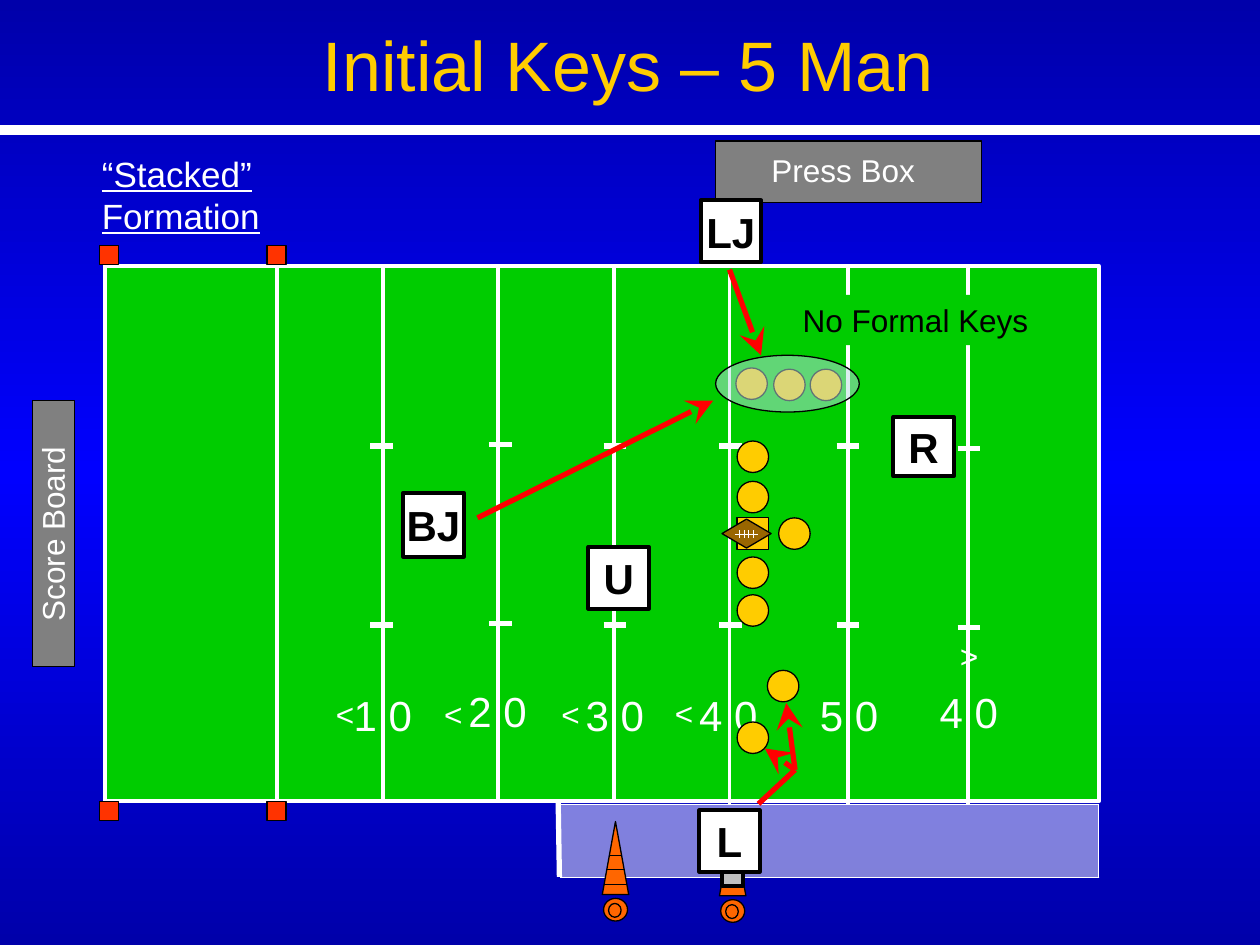
from dataclasses import dataclass
from copy import deepcopy

from lxml.etree import SubElement
from pptx import Presentation
from pptx.dml.color import RGBColor
from pptx.enum.dml import MSO_LINE_DASH_STYLE as DASH
from pptx.enum.shapes import MSO_CONNECTOR, MSO_SHAPE as SHAPE
from pptx.enum.text import MSO_ANCHOR as ANCHOR, MSO_AUTO_SIZE as FIT, PP_ALIGN as ALIGN
from pptx.oxml.ns import qn
from pptx.util import Cm, Pt


@dataclass(frozen=True)
class Theme:
    """Colours and type sizes of the slide."""
    font: str = "Arial"
    white: str = "FFFFFF"
    black: str = "000000"
    gold: str = "FFCC00"
    grass: str = "00CC00"
    grey: str = "808080"
    pylon: str = "FF3300"
    cone: str = "FF6600"
    leather: str = "996600"
    key: str = "FF0000"
    highlight: str = "BBE0E3"
    night: str = "0000AA"
    blue: str = "0000FF"
    title: int = 40
    mark: int = 24
    heading: int = 20
    label: int = 18


T = Theme()


def inch(value):
    """Turn a field measure in inches into a length."""
    return Cm(value * 2.54)


def rgb(color):
    """Return the colour object for a hex string."""
    return RGBColor.from_string(color)


def write(s, text, size=T.label, color=T.white, bold=False, underline=False,
          align=ALIGN.RIGHT, anchor=ANCHOR.TOP, wrap=False, inset=None):
    """Put formatted text into a shape."""
    tf = s.text_frame
    tf.auto_size, tf.word_wrap, tf.vertical_anchor = FIT.NONE, wrap, anchor
    if inset is not None:
        tf.margin_left = tf.margin_right = tf.margin_top = tf.margin_bottom = inset
    tf.text = text
    p = tf.paragraphs[0]
    p.alignment = align
    for r in p.runs:
        r.font.name, r.font.size, r.font.color.rgb = T.font, Pt(size), rgb(color)
        r.font.bold, r.font.underline = bold, underline


def label(sp_tree, text, x, y, w, h, rotation=0, **fmt):
    """Add a text box."""
    s = sp_tree.add_textbox(*map(inch, (x, y, w, h)))
    s.rotation = rotation
    write(s, text, **fmt)


def shape(sp_tree, kind, x, y, w, h, fill=None, line=T.black, width=0.75, alpha=None):
    """Add a preset shape without shadow."""
    s = sp_tree.add_shape(kind, *map(inch, (x, y, w, h)))
    s.shadow.inherit = False
    if fill:
        s.fill.solid()
        s.fill.fore_color.rgb = rgb(fill)
    else:
        s.fill.background()
    if alpha:
        clr = s.fill._xPr.find(qn("a:solidFill"))[0]
        SubElement(clr, qn("a:alpha"), val=str(alpha * 1000))
    if line:
        s.line.color.rgb, s.line.width = rgb(line), Pt(width)
    else:
        s.line.fill.background()
    return s


def line(sp_tree, x1, y1, x2, y2, color=T.white, width=2.25, arrow=False):
    """Add a straight line, with a stealth head if it is an arrow."""
    s = sp_tree.add_connector(MSO_CONNECTOR.STRAIGHT, *map(inch, (x1, y1, x2, y2)))
    s.line.color.rgb, s.line.width = rgb(color), Pt(width)
    if arrow:
        SubElement(s.line._get_or_add_ln(), qn("a:tailEnd"), type="stealth", w="lg", len="lg")
    SubElement(s._element.spPr, qn("a:effectLst"))


def background(slide):
    """Fill the background with a vertical three-stop gradient."""
    fill = slide.background.fill
    fill.gradient()
    fill.gradient_angle = 90
    stops = slide._element.find(".//" + qn("a:gsLst"))
    stops.append(deepcopy(stops[-1]))
    for stop, pos, color in zip(fill.gradient_stops, (0, 0.5, 1), (T.night, T.blue, T.night)):
        stop.position, stop.color.rgb = pos, rgb(color)


def field(tree):
    """Draw the grass, yard lines, pylons, hash marks and yard numbers."""
    shape(tree, SHAPE.RECTANGLE, 0.83, 2.11, 7.89, 4.25, T.grass, T.white, 2.25)
    for x, top in ((2.2, 2.11), (3.04, 2.11), (3.95, 2.11), (4.87, 2.11),
                   (5.79, 2.14), (6.73, 2.13), (7.68, 2.13)):
        line(tree, x, top, x, top + 4.25)
    for x in (0.79, 2.12):
        for y in (1.95, 6.36):
            shape(tree, SHAPE.RECTANGLE, x, y, 0.15, 0.15, T.pylon)
    for text, x, y in (("1 0", 2.61, 5.42), ("2 0", 3.52, 5.39), ("3 0", 4.45, 5.42),
                       ("4 0", 5.35, 5.42), ("5 0", 6.31, 5.42), ("4 0", 7.26, 5.4)):
        label(tree, text, x, y, 0.76, 0.5, size=T.mark)
    line(tree, 4.43, 6.36, 4.44, 6.96, width=3)
    box = shape(tree, SHAPE.RECTANGLE, 4.44, 6.38, 4.28, 0.58, T.white, T.white, 0.25, 50)
    box.line.dash_style = DASH.ROUND_DOT
    for x, y in ((2.94, 3.54), (3.88, 3.53), (4.79, 3.54), (5.71, 3.54), (6.64, 3.54), (7.6, 3.56)):
        for hash_y in (y, y + 1.42):
            line(tree, x, hash_y, x + 0.18, hash_y, width=3)
    for x, y, turn in ((2.56, 5.47, 0), (3.42, 5.47, 0), (4.35, 5.47, 0),
                       (5.25, 5.46, 0), (7.52, 5.04, 180)):
        label(tree, "<", x, y, 0.35, 0.4, rotation=turn)


def cone(tree, x, y, bands):
    """Draw a striped cone over its round base."""
    shape(tree, SHAPE.ISOSCELES_TRIANGLE, x, y, 0.21, 0.58, T.cone)
    shape(tree, SHAPE.OVAL, x + 0.01, y + 0.61, 0.19, 0.18, T.cone)
    shape(tree, SHAPE.OVAL, x + 0.05, y + 0.65, 0.1, 0.11)
    for drop in bands:
        half = 0.105 * drop / 0.58
        line(tree, x + 0.105 - half, y + drop, x + 0.105 + half, y + drop, T.black, 0.75)


def official(tree, text, x, y, h=0.49):
    """Draw an official as a lettered square."""
    s = shape(tree, SHAPE.RECTANGLE, x, y, 0.48, h, T.white, width=2.25)
    write(s, text, size=T.mark, color=T.black, bold=True,
          align=ALIGN.CENTER, anchor=ANCHOR.MIDDLE, inset=0)


def offense(tree):
    """Draw the offensive players and the ball."""
    shape(tree, SHAPE.RECTANGLE, 5.85, 4.11, 0.25, 0.25, T.gold)
    for x, y in ((5.85, 3.82), (5.85, 3.5), (5.85, 4.42), (5.85, 4.72), (6.18, 4.11), (5.85, 5.73),
                 (6.09, 5.32), (5.84, 2.92), (6.43, 2.93), (6.14, 2.93)):
        shape(tree, SHAPE.OVAL, x, y, 0.25, 0.25, T.gold)
    shape(tree, SHAPE.FLOWCHART_DECISION, 5.73, 4.12, 0.39, 0.23, T.leather)
    line(tree, 5.83, 4.24, 6.02, 4.24, width=0.75)
    for x in (5.87, 5.91, 5.94, 5.98):
        line(tree, x, 4.21, x, 4.27, width=0.75)


def keys(tree):
    """Draw the key arrows, the highlighted stack and the note."""
    note = shape(tree, SHAPE.RECTANGLE, 6.27, 2.34, 1.99, 0.4, T.grass, None)
    write(note, "No Formal Keys", color=T.black)
    shape(tree, SHAPE.OVAL, 5.68, 2.82, 1.14, 0.45, T.highlight, alpha=52)
    line(tree, 6.02, 6.38, 6.31, 6.11, T.key, 3)
    for ends in ((6.31, 6.11, 6.24, 5.58), (6.31, 6.11, 6.07, 5.94),
                 (3.79, 4.11, 5.66, 3.18), (5.79, 2.14, 6.04, 2.82)):
        line(tree, *ends, T.key, 3, arrow=True)


def main():
    """Build and save the slide."""
    prs = Presentation()
    prs.slide_width, prs.slide_height = Cm(25.4), Cm(19.05)
    slide = prs.slides.add_slide(prs.slide_layouts[5])
    background(slide)
    tree, title = slide.shapes, slide.shapes.title
    title.left, title.top, title.width, title.height = map(inch, (1.91, 0.12, 6.15, 0.77))
    write(title, "Initial Keys – 5 Man", size=T.title, color=T.gold, align=ALIGN.CENTER, wrap=True)

    shape(tree, SHAPE.RECTANGLE, 5.68, 1.12, 2.11, 0.49, T.grey)
    label(tree, "Press Box", 6.02, 1.15, 1.34, 0.4)
    line(tree, 0, 1.03, 10, 1.03, width=6)
    label(tree, "“Stacked”\vFormation", 0.71, 1.16, 2.72, 1.27,
          size=T.heading, underline=True, align=ALIGN.LEFT, wrap=True)
    field(tree)
    cone(tree, 5.71, 6.53, (0.38, 0.49))
    shape(tree, SHAPE.RECTANGLE, 5.73, 6.82, 0.17, 0.21, "C0C0C0", width=2.25)
    cone(tree, 4.78, 6.52, (0.27, 0.38, 0.5))
    shape(tree, SHAPE.RECTANGLE, 0.26, 3.18, 0.33, 2.11, T.grey)
    label(tree, "Score Board", -0.38, 4.04, 1.59, 0.4, rotation=270)
    official(tree, "U", 4.67, 4.34)
    official(tree, "R", 7.09, 3.31, 0.47)
    official(tree, "L", 5.55, 6.43)
    official(tree, "LJ", 5.56, 1.59)
    official(tree, "BJ", 3.2, 3.91, 0.51)
    offense(tree)
    keys(tree)
    prs.save("out.pptx")


if __name__ == "__main__":
    main()
